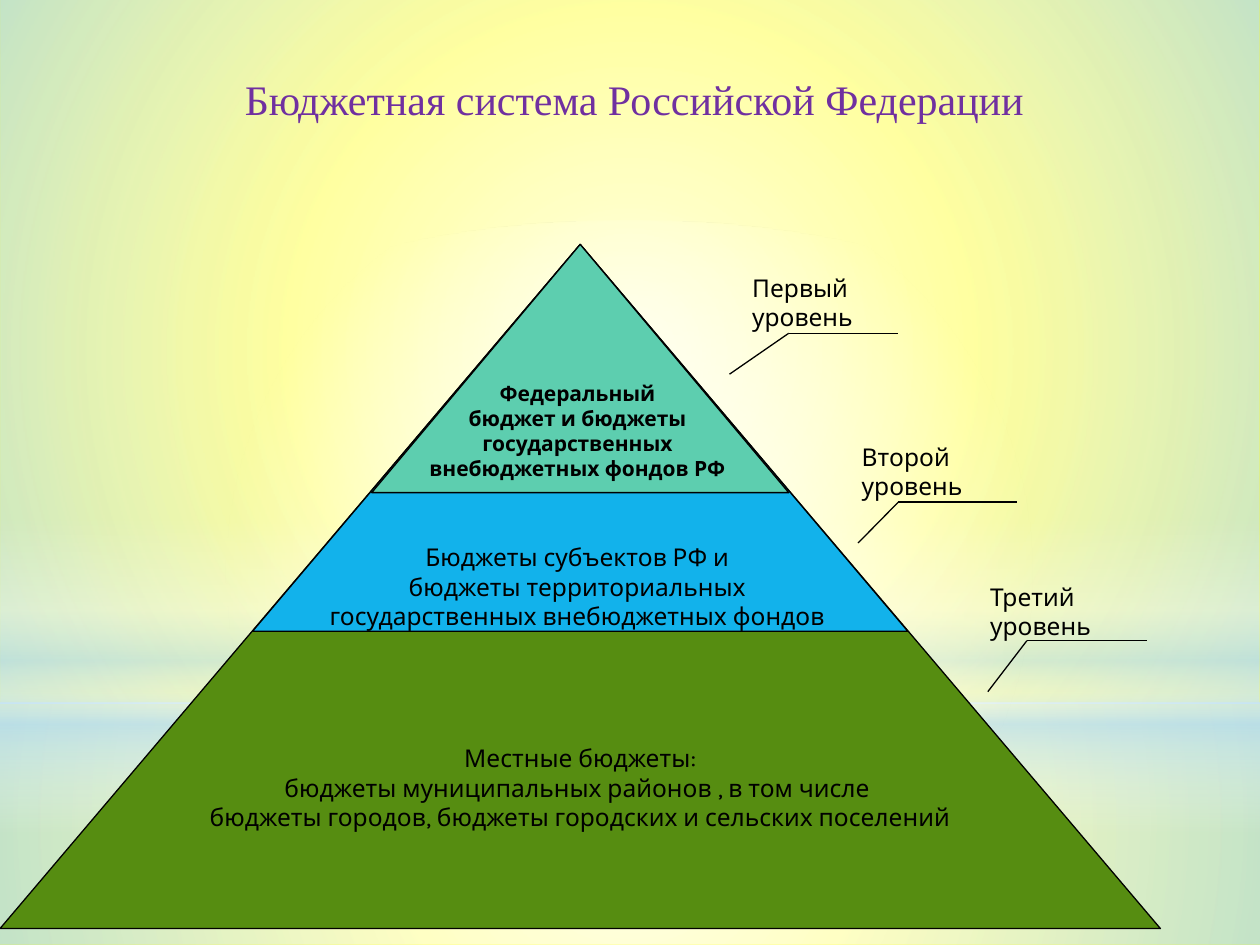
from lxml import etree
from pptx import Presentation, util as u
from pptx.dml.color import RGBColor
from pptx.enum import shapes, text
from pptx.oxml import ns

# Content: lengths are in cells of a grid of 100 columns by 75 rows
COLUMNS, ROWS = 100, 75
WIDTH, HEIGHT = u.Inches(10), u.Inches(7.5)
COLOURS = {"yellow": "FFFF00", "white": "FFFFFF", "sky": "B4DCFA",
           "violet": "7030A0", "black": "000000", "green": "568D11",
           "blue": "12B2EB", "mint": "5DCEAF"}
BODY_FONT, TITLE_FONT = "Karla", "Times New Roman"
TITLE = "Бюджетная система Российской Федерации"
TITLE_PLACE = (16.1, 3.9, 68.5, 7.9)

# Preset, place, linear angle (None is radial), stops: position, colour, opacity
GLOWS = [
    ("RECTANGLE", (0, 55.8, 100, 19.2), None,
     [(0, "white", 91), (37, "white", 76), (100, "sky", 79)]),
    ("RECTANGLE", (0, 0, 100, 55.8), None,
     [(0, "white", 89), (48, "white", 62), (100, "sky", 79)]),
    ("RECTANGLE", (0, 41.2, 100, 25), 90,
     [(0, "white", 0), (29, "white", 30), (45, "sky", 40),
      (55, "white", 26), (65, "sky", 60), (100, "white", 0)]),
    ("OVAL", (0, 17.5, 100, 55.8), None,
     [(0, "white", 100), (56, "white", 0)]),
]

# Triangles share one apex: width, height, colour, size, bold, top inset, lines
APEX = (46.05, 19.4)
LEVELS = [
    (92.1, 54.3, "green", 14, False, 5.2,
     ["Местные бюджеты:",
      "бюджеты муниципальных районов , в том числе ",
      "бюджеты городов, бюджеты городских и сельских поселений"]),
    (52, 30.7, "blue", 14, False, 8.7,
     ["Бюджеты субъектов РФ и ",
      "бюджеты территориальных ",
      "государственных внебюджетных фондов "]),
    (33.1, 19.7, "mint", 12, True, 0.5,
     ["Федеральный ", "бюджет и бюджеты ", "государственных ",
      "внебюджетных фондов РФ "]),
]

# Label, its place, then the tip, knee and end of its pointer
LABELS = [
    ("Первый уровень", (58.7, 22.3, 16.9, 3.4),
     [(57.9, 29.7), (62.6, 26.45), (71.3, 26.45)]),
    ("Второй уровень", (67.4, 35.7, 16.2, 3.4),
     [(68.1, 43.1), (71.3, 39.85), (80.7, 39.85)]),
    ("Третий уровень", (77.6, 46.8, 16.3, 3.4),
     [(78.4, 54.9), (81.5, 50.85), (91, 50.85)]),
]
LABEL_RIGHT_INSET = 6


def x(columns):
    return u.Emu(round(WIDTH * columns / COLUMNS))


def y(rows):
    return u.Emu(round(HEIGHT * rows / ROWS))


def grid(left, top, width, height):
    return x(left), y(top), x(width), y(height)


def colour(name):
    return RGBColor.from_string(COLOURS[name])


def add_glow(page, preset, place, angle, stops):
    shape = page.shapes.add_shape(
        getattr(shapes.MSO_SHAPE, preset), *grid(*place))
    shape.shadow.inherit = False
    shape.line.fill.background()
    gradient = etree.Element(ns.qn("a:gradFill"), rotWithShape="1")
    stop_list = etree.SubElement(gradient, ns.qn("a:gsLst"))
    for position, name, opacity in stops:
        stop = etree.SubElement(stop_list, ns.qn("a:gs"), pos=str(position * 1000))
        tint = etree.SubElement(stop, ns.qn("a:srgbClr"), val=COLOURS[name])
        etree.SubElement(tint, ns.qn("a:alpha"), val=str(opacity * 1000))
    if angle is None:
        radial = etree.SubElement(gradient, ns.qn("a:path"))
        radial.set("path", "circle")
        etree.SubElement(radial, ns.qn("a:fillToRect"),
                         {side: "50000" for side in "ltrb"})
    else:
        etree.SubElement(gradient, ns.qn("a:lin"), ang=str(angle * 60000), scaled="0")
    shape.element.spPr.find(ns.qn("a:prstGeom")).addnext(gradient)


def write(box, lines, size, name="black", font=BODY_FONT, bold=False,
          align=text.PP_ALIGN.CENTER, wrap=True):
    frame = box.text_frame
    frame.word_wrap = wrap
    frame.vertical_anchor = text.MSO_ANCHOR.MIDDLE
    frame.text = "\n".join(lines)
    for para in frame.paragraphs:
        para.alignment = align
        para.font.size = u.Pt(size)
        para.font.name = font
        para.font.bold = bold
        para.font.color.rgb = colour(name)
    return frame


def add_line(page, start, end):
    line = page.shapes.add_connector(
        shapes.MSO_CONNECTOR.STRAIGHT, x(start[0]), y(start[1]), x(end[0]), y(end[1]))
    line.line.color.rgb = colour("black")
    line.line.width = u.Pt(0.75)
    etree.SubElement(line.element.spPr, ns.qn("a:effectLst"))


def main():
    deck = Presentation()
    deck.slide_width, deck.slide_height = WIDTH, HEIGHT
    page = deck.slides.add_slide(deck.slide_layouts[6])

    # Background
    page.background.fill.solid()
    page.background.fill.fore_color.rgb = colour("yellow")
    for glow in GLOWS:
        add_glow(page, *glow)

    # Title
    title = page.shapes.add_textbox(*grid(*TITLE_PLACE))
    write(title, [TITLE], 24, "violet", TITLE_FONT)

    # Pyramid, largest level first
    for width, height, name, size, bold, inset, lines in LEVELS:
        level = page.shapes.add_shape(
            shapes.MSO_SHAPE.ISOSCELES_TRIANGLE,
            *grid(APEX[0] - width / 2, APEX[1], width, height))
        level.shadow.inherit = False
        level.fill.solid()
        level.fill.fore_color.rgb = colour(name)
        level.line.color.rgb = colour("black")
        level.line.width = u.Pt(0.75)
        frame = write(level, lines, size, bold=bold, wrap=False)
        frame.margin_top = y(inset)

    # Pointers and level labels
    for label, place, points in LABELS:
        for start, end in zip(points, points[1:]):
            add_line(page, start, end)
        box = page.shapes.add_textbox(*grid(*place))
        frame = write(box, [label], 14, align=text.PP_ALIGN.LEFT)
        frame.margin_right = x(LABEL_RIGHT_INSET)

    deck.save("out.pptx")


if __name__ == "__main__":
    main()
